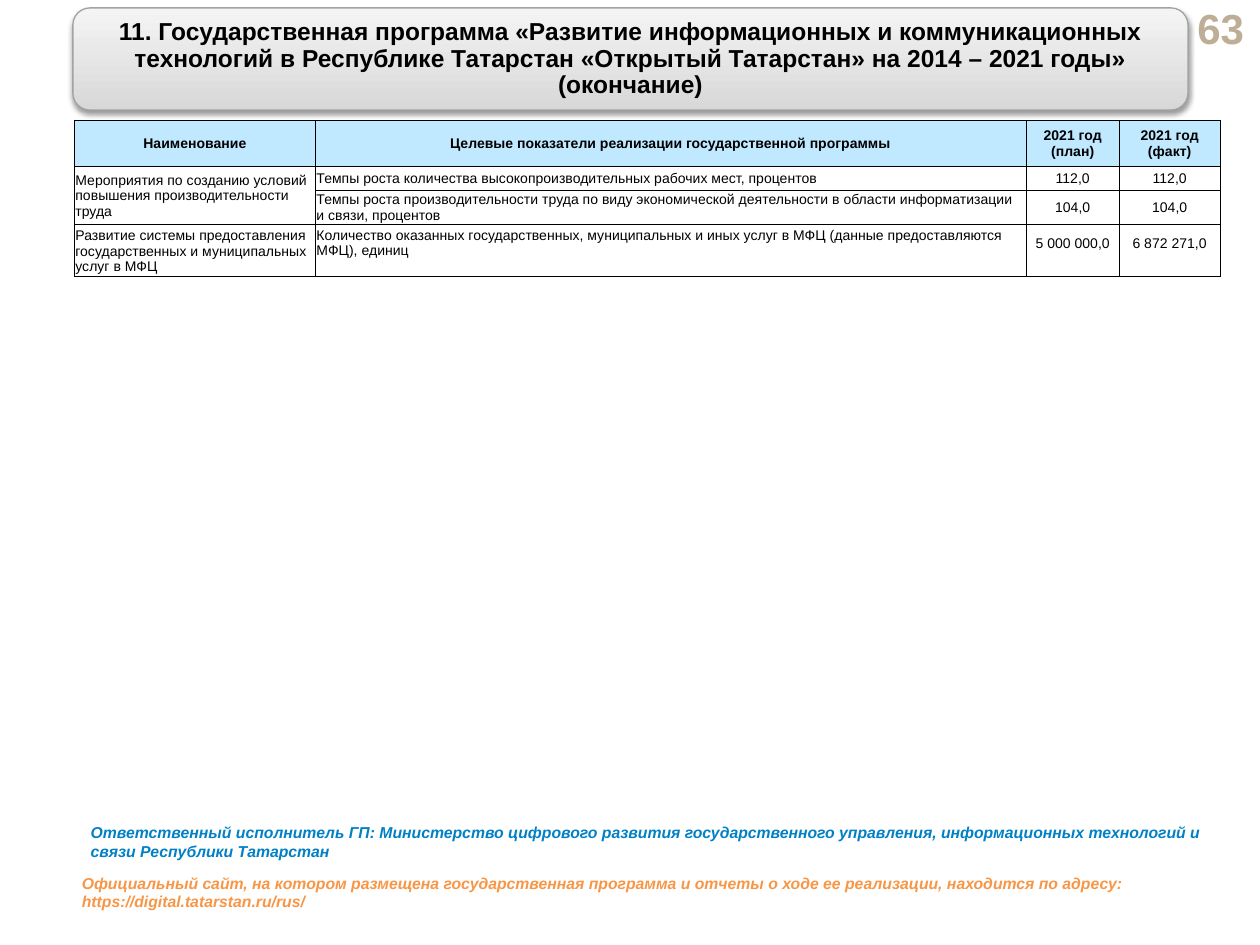
import pptx
import pptx.dml.color
import pptx.enum.shapes
import pptx.enum.text
import pptx.oxml
import pptx.oxml.ns
import pptx.util
from pptx.util import Cm

ALIGN = pptx.enum.text.PP_ALIGN
ANCHOR = pptx.enum.text.MSO_ANCHOR
COLORS = {
    "text": "000000", "number": "BFAE96", "header": "C0E9FF", "cell": "FFFFFF",
    "border": "000000", "executor": "0081C5", "website": "F79646",
    "title_bottom": "D8D8D8", "title_top": "F4F4F4", "title_line": "A2A2A2",
}
COLUMNS = [4.86, 14.32, 1.89, 2.02]
ROWS = [0.93, 0.48, 0.69, 1.05]
TABLE = [
    ["Наименование", "Целевые показатели реализации государственной программы",
     "2021 год\v(план)", "2021 год\v(факт)"],
    ["Мероприятия по созданию условий повышения производительности труда",
     "Темпы роста количества высокопроизводительных рабочих мест, процентов",
     "112,0", "112,0"],
    ["", "Темпы роста производительности труда по виду экономической деятельности "
     "в области информатизации и связи, процентов", "104,0", "104,0"],
    ["Развитие системы предоставления государственных и муниципальных услуг в МФЦ",
     "Количество оказанных государственных, муниципальных и иных услуг в МФЦ "
     "(данные предоставляются МФЦ), единиц", "5 000 000,0", "6 872 271,0"],
]


def rgb(name):
    return pptx.dml.color.RGBColor.from_string(COLORS[name])


def xml(markup):
    return pptx.oxml.parse_xml(markup.replace(" ", f' {pptx.oxml.ns.nsdecls("a")} ', 1))


class SlideBuilder:
    font_name = "Arial"

    def __init__(self, slide):
        self.slide = slide

    def format_text(self, text_frame, size, color="text", bold=True, italic=False, align=ALIGN.LEFT):
        for paragraph in text_frame.paragraphs:
            paragraph.alignment = align
            for run in paragraph.runs:
                font = run.font
                font.name, font.size = self.font_name, pptx.util.Pt(size)
                font.bold, font.italic = bold, italic
                font.color.rgb = rgb(color)

    def text(self, left, top, width, height, text, size, color, **style):
        shape = self.slide.shapes.add_textbox(Cm(left), Cm(top), Cm(width), Cm(height))
        text_frame = shape.text_frame
        text_frame.word_wrap = True
        text_frame.vertical_anchor = style.pop("anchor", ANCHOR.TOP)
        text_frame.text = text
        self.format_text(text_frame, size, color, **style)

    def title(self, left, top, width, height, text):
        shape = self.slide.shapes.add_shape(
            pptx.enum.shapes.MSO_SHAPE.ROUNDED_RECTANGLE, Cm(left), Cm(top), Cm(width), Cm(height))
        shape.fill.gradient()
        shape.fill.gradient_angle = 90
        for stop, name, position in zip(shape.fill.gradient_stops, ("title_bottom", "title_top"), (0, 1)):
            stop.color.rgb = rgb(name)
            stop.position = position
        shape.line.color.rgb = rgb("title_line")
        shape.line.width = pptx.util.Pt(0.75)
        shape.shadow.inherit = False
        effects = shape._element.spPr.find(pptx.oxml.ns.qn("a:effectLst"))
        effects.append(xml(
            '<a:outerShdw blurRad="40000" dist="20000" dir="5400000" rotWithShape="0">'
            '<a:srgbClr val="000000"><a:alpha val="38000"/></a:srgbClr></a:outerShdw>'))
        text_frame = shape.text_frame
        text_frame.word_wrap = True
        text_frame.vertical_anchor = ANCHOR.MIDDLE
        text_frame.text = text
        for paragraph in text_frame.paragraphs:
            paragraph.line_spacing = pptx.util.Pt(15)
        self.format_text(text_frame, 14, align=ALIGN.CENTER)

    def cell(self, cell, text, header, centered, bottom):
        cell.margin_left = cell.margin_top = cell.margin_right = Cm(0.02)
        cell.margin_bottom = Cm(bottom)
        cell.vertical_anchor = ANCHOR.MIDDLE
        properties = cell._tc.get_or_add_tcPr()
        for side in ("lnL", "lnR", "lnT", "lnB"):
            properties.append(xml(
                f'<a:{side} w="3175"><a:solidFill><a:srgbClr val="{COLORS["border"]}"/>'
                f'</a:solidFill></a:{side}>'))
        cell.fill.solid()
        cell.fill.fore_color.rgb = rgb("header" if header else "cell")
        cell.text_frame.text = text
        self.format_text(cell.text_frame, 8, bold=header, align=ALIGN.CENTER if centered else ALIGN.LEFT)

    def table(self, left, top, columns, rows, texts):
        table = self.slide.shapes.add_table(
            len(rows), len(columns), Cm(left), Cm(top), Cm(sum(columns)), Cm(sum(rows))).table
        for column, width in zip(table.columns, columns):
            column.width = Cm(width)
        for row, height in zip(table.rows, rows):
            row.height = Cm(height)
        last = len(rows) - 1
        for i, row_texts in enumerate(texts):
            for j, text in enumerate(row_texts):
                bottom = 0.32 if i == last and j > 0 else 0
                self.cell(table.cell(i, j), text, i == 0, i == 0 or j > 1, bottom)
        table.cell(1, 0).merge(table.cell(2, 0))


def main():
    presentation = pptx.Presentation()
    presentation.slide_width, presentation.slide_height = Cm(25.4), Cm(19.05)
    builder = SlideBuilder(presentation.slides.add_slide(presentation.slide_layouts[6]))
    builder.text(23.7, 0.13, 1.63, 0.86, "63", 24, "number", align=ALIGN.RIGHT, anchor=ANCHOR.MIDDLE)
    builder.table(1.5, 2.42, COLUMNS, ROWS, TABLE)
    builder.title(
        1.47, 0.16, 22.48, 2.06,
        "11. Государственная программа «Развитие информационных и коммуникационных технологий "
        "в Республике Татарстан «Открытый Татарстан» на 2014 – 2021 годы»\n(окончание)")
    builder.text(
        1.58, 16.46, 23.7, 1.02,
        "Ответственный исполнитель ГП: Министерство цифрового развития государственного управления, "
        "информационных технологий и связи Республики Татарстан", 9, "executor", italic=True)
    builder.text(
        1.4, 17.48, 22.23, 1.02,
        "Официальный сайт, на котором размещена государственная программа и отчеты о ходе ее реализации, "
        "находится по адресу: https://digital.tatarstan.ru/rus/", 9, "website", italic=True)
    presentation.save("out.pptx")


if __name__ == "__main__":
    main()
